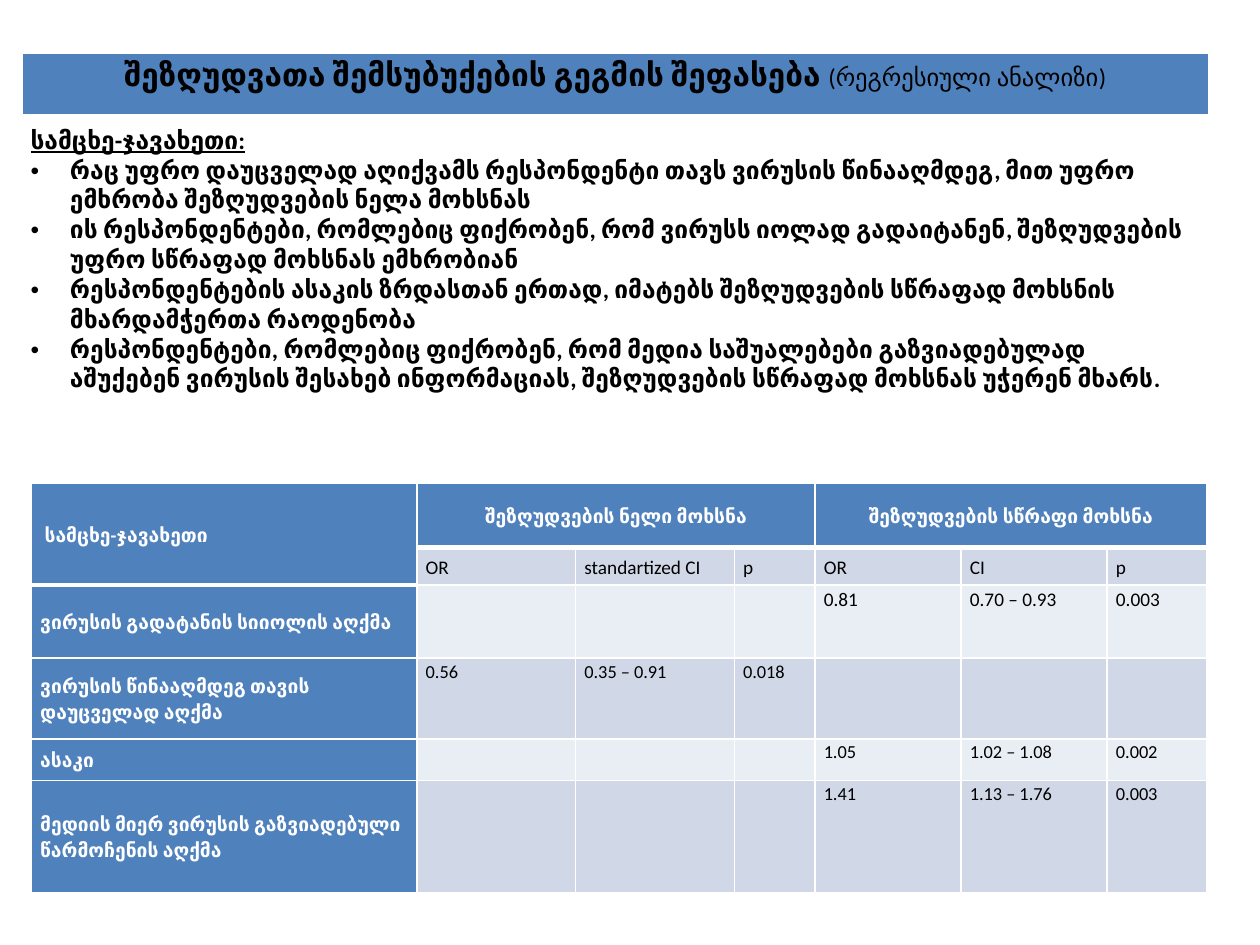
import dataclasses
import pptx
import pptx.dml.color
import pptx.enum.text
import pptx.oxml
import pptx.oxml.ns
import pptx.util

Pt = pptx.util.Pt
Align = pptx.enum.text.PP_ALIGN
Anchor = pptx.enum.text.MSO_ANCHOR


@dataclasses.dataclass(frozen=True)
class Theme:
    font: str = "Calibri"
    blue: str = "4F81BD"
    dark: str = "D0D8E8"
    light: str = "E9EDF4"
    white: str = "FFFFFF"
    black: str = "000000"
    title: float = 18
    body: float = 14
    cell: float = 11
    small: float = 10.5
    lead: float = 1.07


THEME = Theme()
TITLE = ("შეზღუდვათა შემსუბუქების გეგმის შეფასება ", "(რეგრესიული ანალიზი)")
REGION = "სამცხე-ჯავახეთი:"
POINTS = (
    "რაც უფრო დაუცველად აღიქვამს რესპონდენტი თავს ვირუსის წინააღმდეგ, მით უფრო ემხრობა შეზღუდვების ნელა მოხსნას",
    "ის რესპონდენტები, რომლებიც ფიქრობენ, რომ ვირუსს იოლად გადაიტანენ, შეზღუდვების უფრო სწრაფად მოხსნას ემხრობიან",
    "რესპონდენტების ასაკის ზრდასთან ერთად, იმატებს შეზღუდვების სწრაფად მოხსნის მხარდამჭერთა რაოდენობა",
    "რესპონდენტები, რომლებიც ფიქრობენ, რომ მედია საშუალებები გაზვიადებულად აშუქებენ ვირუსის შესახებ ინფორმაციას, შეზღუდვების სწრაფად მოხსნას უჭერენ მხარს.",
)
NONE = ("", "", "")
ROWS = (
    (" სამცხე-ჯავახეთი", "შეზღუდვების ნელი მოხსნა", "", "", "შეზღუდვების სწრაფი მოხსნა", "", ""),
    ("", "OR", "standartized CI", "p", "OR", "CI", "p"),
    ("ვირუსის გადატანის სიიოლის აღქმა", *NONE, "0.81", "0.70 – 0.93", "0.003"),
    ("ვირუსის წინააღმდეგ თავის დაუცველად აღქმა", "0.56", "0.35 – 0.91", "0.018", *NONE),
    ("ასაკი", *NONE, "1.05", "1.02 – 1.08", "0.002"),
    ("მედიის მიერ ვირუსის გაზვიადებული წარმოჩენის აღქმა", *NONE, "1.41", "1.13 – 1.76", "0.003"),
)
WIDTHS = (220.3, 90.7, 90.7, 46.1, 83.5, 83.5, 56.9)
HEIGHTS = (36.7, 21.6, 41.8, 46.1, 23.8, 64.1)
SPANS = ((0, 0, 1, 0), (0, 1, 0, 3), (0, 4, 0, 6))


def paint(fill, color):
    fill.solid()
    fill.fore_color.rgb = pptx.dml.color.RGBColor.from_string(color)


def style(run, size, color, bold):
    run.font.name = THEME.font
    run.font.size = Pt(size)
    run.font.bold = bold
    paint(run.font.fill, color)


def border(cell, base):
    props = cell._tc.get_or_add_tcPr()
    for side, width in zip("LRTB", (1, 1, 1, base)):
        props.append(pptx.oxml.parse_xml(
            f'<a:ln{side} w="{Pt(width)}" {pptx.oxml.ns.nsdecls("a")}>'
            f'<a:solidFill><a:srgbClr val="{THEME.white}"/></a:solidFill>'
            f'</a:ln{side}>'))


def dress(cell, color, base, top=0):
    border(cell, base)
    paint(cell.fill, color)
    cell.margin_left = cell.margin_right = Pt(5)
    cell.margin_top, cell.margin_bottom = Pt(top), 0


def add_table(slide, left, top, widths, heights):
    table = slide.shapes.add_table(
        len(heights), len(widths), Pt(left), Pt(top),
        Pt(sum(widths)), Pt(sum(heights))).table
    for col, width in zip(table.columns, widths):
        col.width = Pt(width)
    for row, height in zip(table.rows, heights):
        row.height = Pt(height)
    return table


def add_panel(slide, top, height, color):
    cell = add_table(slide, 12.5, top, (678,), (height,)).cell(0, 0)
    dress(cell, color, 3)
    return cell.text_frame


def add_title(slide):
    frame = add_panel(slide, 30.5, 36, THEME.blue)
    para = frame.paragraphs[0]
    para.alignment = Align.CENTER
    para.line_spacing = THEME.lead
    sizes = (THEME.title, THEME.body)
    for text, size, bold in zip(TITLE, sizes, (True, False)):
        run = para.add_run()
        run.text = text
        style(run, size, THEME.black, bold)


def bullet(para):
    props = para._p.get_or_add_pPr()
    props.set("marL", str(Pt(22.5)))
    props.set("indent", str(-Pt(22.5)))
    space = pptx.oxml.ns.nsdecls("a")
    props.append(pptx.oxml.parse_xml(f'<a:buFont typeface="Arial" {space}/>'))
    props.append(pptx.oxml.parse_xml(f'<a:buChar char="•" {space}/>'))


def add_list(slide):
    frame = add_panel(slide, 72, 178.5, THEME.white)
    frame.text = "\n".join((REGION, *POINTS))
    for para in frame.paragraphs:
        style(para.runs[0], THEME.body, THEME.black, True)
    for para in frame.paragraphs[1:]:
        bullet(para)
    frame.paragraphs[0].runs[0].font.underline = True


def fill_cell(cell, text, row, col):
    head = row == 0 or col == 0
    thick = row == 0 or (row == 1 and col == 0)
    band = THEME.dark if row % 2 else THEME.light
    dress(cell, THEME.blue if head else band, 3 if thick else 1, 0.7)
    if not text:
        return
    cell.vertical_anchor = Anchor.MIDDLE if head or row == 1 else Anchor.TOP
    para = cell.text_frame.paragraphs[0]
    para.text = text
    para.line_spacing = THEME.lead
    para.space_after = Pt(8)
    if row == 0 and col:
        para.alignment = Align.CENTER
    size = THEME.small if row > 2 and col else THEME.cell
    style(para.runs[0], size, THEME.white if head else THEME.black, head)


def add_grid(slide):
    table = add_table(slide, 18, 276, WIDTHS, HEIGHTS)
    for top, left, low, right in SPANS:
        table.cell(top, left).merge(table.cell(low, right))
    for row, texts in enumerate(ROWS):
        for col, text in enumerate(texts):
            fill_cell(table.cell(row, col), text, row, col)


def main():
    deck = pptx.Presentation()
    deck.slide_width, deck.slide_height = Pt(720), Pt(540)
    slide = deck.slides.add_slide(deck.slide_layouts[6])
    paint(slide.background.fill, THEME.white)
    add_title(slide)
    add_list(slide)
    add_grid(slide)
    deck.save("out.pptx")


if __name__ == "__main__":
    main()
